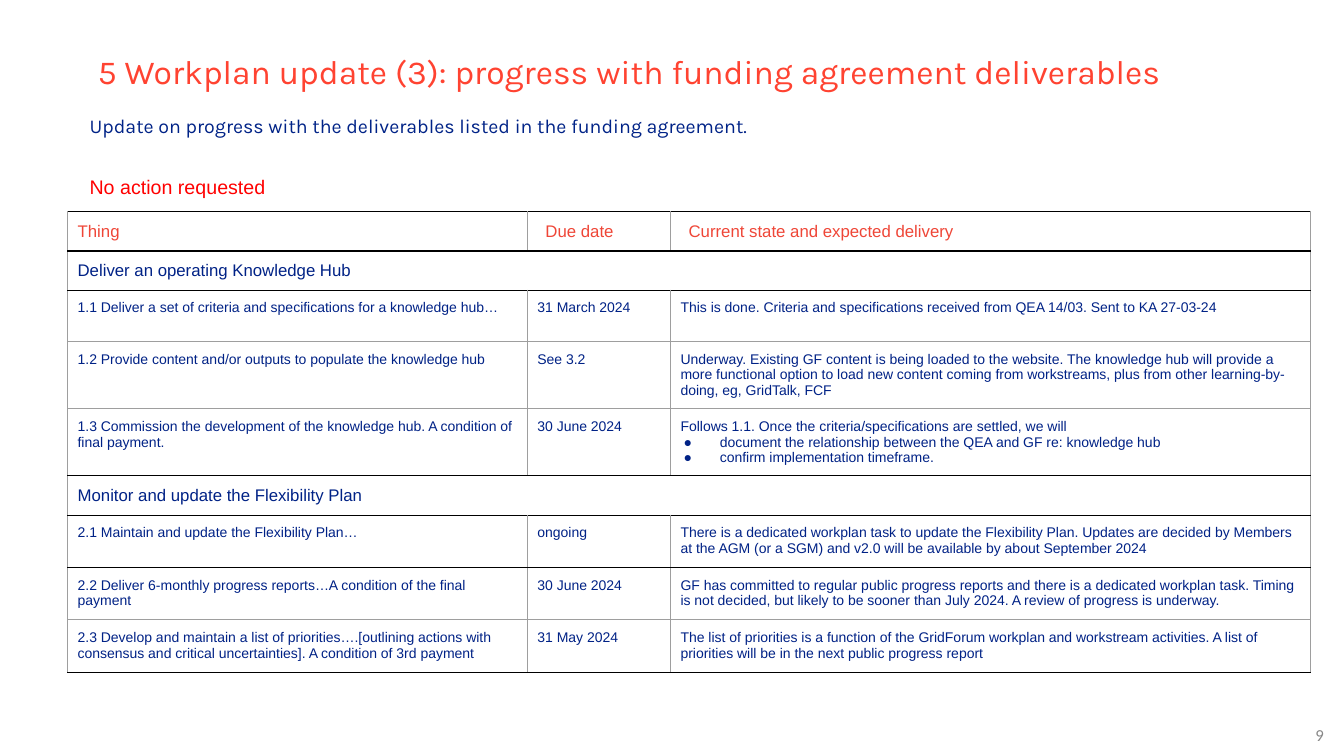
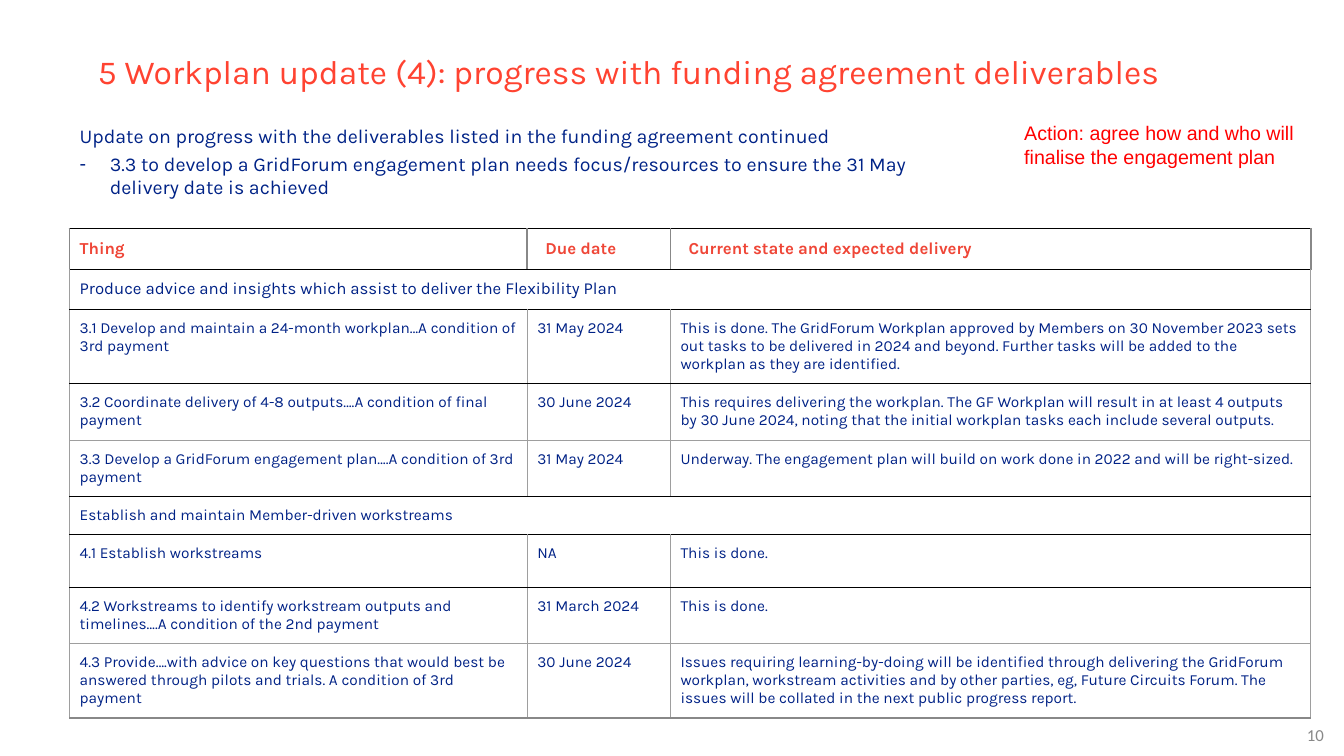
from dataclasses import dataclass

from lxml import etree
from pptx import Presentation
from pptx import util as u
from pptx.dml.color import RGBColor
from pptx.enum import text as t
from pptx.oxml import ns

# Shared look
CORAL, HEAD, NAVY, CELL = "FF4331", "EF4637", "002387", "002286"
RED, GREY, MID, BLACK = "FF0000", "9E9E9E", "888888", "000000"
KARLA, ARIAL = "Karla", "Arial"


@dataclass(frozen=True)
class Font:
    name: str
    size: float
    color: str
    bold: bool = False


@dataclass(frozen=True)
class Para:
    text: str
    font: Font
    left: float = 0
    hang: float = 0
    mark: str = ""
    before: float = 0
    line: float = 1
    align: t.PP_ALIGN = t.PP_ALIGN.LEFT


@dataclass(frozen=True)
class Edge:
    color: str = GREY
    width: float = 0.75


@dataclass(frozen=True)
class Row:
    """One cell text makes a section row; a new line in a cell is a bullet."""
    cells: tuple[str, ...]
    high: float
    base: Edge
    font: Font


@dataclass(frozen=True)
class Note:
    box: tuple[float, float, float, float]
    paras: tuple[Para, ...]
    top: float = 0.05


@dataclass(frozen=True)
class Page:
    number: int
    title: str
    notes: tuple[Note, ...]
    left: float
    top: float
    wide: tuple[float, ...]
    side: Edge
    rows: tuple[Row, ...]


THIN, DARK, THICK = Edge(), Edge(BLACK, 1), Edge(MID, 1.5)
TITLE = Font(KARLA, 24, CORAL)
LEAD = Font(KARLA, 14, NAVY)
ALERT = Font(ARIAL, 14, RED)
FOOT = Font("Calibri", 12, MID)
HEAD_A, SECT_A, BODY_A = Font(ARIAL, 12, HEAD), Font(ARIAL, 12, CELL), Font(ARIAL, 10, CELL)
HEAD_K, SECT_K, BODY_K = Font(KARLA, 12, HEAD, True), Font(KARLA, 12, CELL), Font(KARLA, 11, CELL)
NAMES = ("Thing", "Due date", "Current state and expected delivery")

PAGES = (
    Page(
        9, "5 Workplan update (3): progress with funding agreement deliverables",
        (Note((0.79, 1.08, 11.88, 0.97), (
            Para("Update on progress with the deliverables listed in the funding agreement.", LEAD),
            Para("No action requested", ALERT, before=26.5))),),
        0.67, 2.1, (4.56, 1.42, 6.35), THIN,
        (
            Row(NAMES, 0.39, DARK, HEAD_A),
            Row(("Deliver an operating Knowledge Hub",), 0.39, DARK, SECT_A),
            Row(("1.1 Deliver a set of criteria and specifications for a knowledge hub…",
                 "31 March 2024",
                 "This is done. Criteria and specifications received from QEA 14/03. "
                 "Sent to KA 27-03-24"), 0.51, THIN, BODY_A),
            Row(("1.2 Provide content and/or outputs to populate the knowledge hub",
                 "See 3.2",
                 "Underway. Existing GF content is being loaded to the website. The knowledge "
                 "hub will provide a more functional option to load new content coming from "
                 "workstreams, plus from other learning-by-doing, eg, GridTalk, FCF"),
                0.66, THIN, BODY_A),
            Row(("1.3 Commission the development of the knowledge hub. "
                 "A condition of final payment.",
                 "30 June 2024",
                 "Follows 1.1. Once the criteria/specifications are settled, we will\n"
                 "document the relationship between the QEA and GF re: knowledge hub\n"
                 "confirm implementation timeframe."), 0.66, DARK, BODY_A),
            Row(("Monitor and update the Flexibility Plan",), 0.39, DARK, SECT_A),
            Row(("2.1 Maintain and update the Flexibility Plan…",
                 "ongoing",
                 "There is a dedicated workplan task to update the Flexibility Plan. Updates "
                 "are decided by Members at the AGM (or a SGM) and v2.0 will be available by "
                 "about September 2024"), 0.52, DARK, BODY_A),
            Row(("2.2 Deliver 6-monthly progress reports…A condition of the final payment",
                 "30 June 2024",
                 "GF has committed to regular public progress reports and there is a dedicated "
                 "workplan task. Timing is not decided, but likely to be sooner than July 2024. "
                 "A review of progress is underway."), 0.52, THIN, BODY_A),
            Row(("2.3 Develop and maintain a list of priorities….[outlining actions with "
                 "consensus and critical uncertainties]. A condition of 3rd payment",
                 "31 May 2024",
                 "The list of priorities is a function of the GridForum workplan and workstream "
                 "activities. A list of priorities will be in the next public progress report"),
                0.52, DARK, BODY_A),
        )),
    Page(
        10, "5 Workplan update (4): progress with funding agreement deliverables",
        (Note((0.69, 1.18, 8.65, 1.09), (
            Para("Update on progress with the deliverables listed in the funding agreement "
                 "continued", LEAD),
            Para("3.3 to develop a GridForum engagement plan needs focus/resources to ensure "
                 "the 31 May delivery date is achieved", LEAD, 0.3, -0.3, "-", 3))),
         Note((9.98, 1.1, 3.15, 0.67), (
             Para("Action: agree how and who will finalise the engagement plan",
                  ALERT, 0.08),), 0.1)),
        0.69, 2.27, (4.54, 1.42, 6.35), THICK,
        (
            Row(NAMES, 0.4, DARK, HEAD_K),
            Row(("Produce advice and insights which assist to deliver the Flexibility Plan",),
                0.4, DARK, SECT_K),
            Row(("3.1 Develop and maintain a 24-month workplan…A condition of 3rd payment",
                 "31 May 2024",
                 "This is done. The GridForum Workplan approved by Members on 30 November 2023 "
                 "sets out tasks to be delivered in 2024 and beyond. Further tasks will be "
                 "added to the workplan as they are identified."), 0.73, DARK, BODY_K),
            Row(("3.2 Coordinate delivery of 4-8 outputs….A condition of final payment",
                 "30 June 2024",
                 "This requires delivering the workplan. The GF Workplan will result in at least "
                 "4 outputs by 30 June 2024, noting that the initial workplan tasks each include "
                 "several outputs."), 0.56, THIN, BODY_K),
            Row(("3.3 Develop a GridForum engagement plan….A condition of 3rd payment",
                 "31 May 2024",
                 "Underway. The engagement plan will build on work done in 2022 and will be "
                 "right-sized."), 0.56, DARK, BODY_K),
            Row(("Establish and maintain Member-driven workstreams",), 0.38, DARK, BODY_K),
            Row(("4.1 Establish workstreams", "NA", "This is done."), 0.52, DARK, BODY_K),
            Row(("4.2 Workstreams to identify workstream outputs and timelines….A condition of "
                 "the 2nd payment",
                 "31 March 2024", "This is done."), 0.56, THIN, BODY_K),
            Row(("4.3 Provide….with advice on key questions that would best be answered through "
                 "pilots and trials. A condition of 3rd payment",
                 "30 June 2024",
                 "Issues requiring learning-by-doing will be identified through delivering the "
                 "GridForum workplan, workstream activities and by other parties, eg, Future "
                 "Circuits Forum. The issues will be collated in the next public progress "
                 "report."), 0.74, THICK, BODY_K),
        )),
)


def paint(color: str) -> RGBColor:
    return RGBColor.from_string(color)


def solid(node, tag: str, color: str) -> None:
    fill = etree.SubElement(node, ns.qn(tag))
    etree.SubElement(fill, ns.qn("a:srgbClr"), val=color)


def write(frame, paras: tuple[Para, ...]) -> None:
    """Fill a text frame with paragraphs."""
    frame.word_wrap = True
    for i, item in enumerate(paras):
        para = frame.add_paragraph() if i else frame.paragraphs[0]
        para.alignment = item.align
        para.line_spacing = item.line
        para.space_before = u.Pt(item.before)
        run = para.add_run()
        run.text = item.text
        font = run.font
        font.name, font.size, font.bold = item.font.name, u.Pt(item.font.size), item.font.bold
        font.color.rgb = paint(item.font.color)
        props = para._p.get_or_add_pPr()
        props.set("marL", str(u.Inches(item.left)))
        props.set("indent", str(u.Inches(item.hang)))
        if item.mark:
            solid(props, "a:buClr", CELL)
            etree.SubElement(props, ns.qn("a:buFont"), typeface=ARIAL)
            etree.SubElement(props, ns.qn("a:buChar"), char=item.mark)


def place(shape, box: tuple[float, float, float, float]) -> None:
    shape.left, shape.top, shape.width, shape.height = map(u.Inches, box)


def label(slide, note: Note, anchor=t.MSO_ANCHOR.TOP) -> None:
    shape = slide.shapes.add_textbox(*map(u.Inches, note.box))
    frame = shape.text_frame
    frame.margin_top = frame.margin_bottom = u.Inches(note.top)
    frame.vertical_anchor = anchor
    write(frame, note.paras)


def rule(cell, edges: dict[str, Edge]) -> None:
    """Draw cell borders, in the order left, right, top, bottom."""
    props = cell._tc.get_or_add_tcPr()
    for side, edge in edges.items():
        line = etree.SubElement(props, ns.qn(f"a:ln{side}"), w=str(u.Pt(edge.width)))
        solid(line, "a:solidFill", edge.color)


def grid(slide, page: Page) -> None:
    high = sum(row.high for row in page.rows)
    shape = slide.shapes.add_table(
        len(page.rows), len(page.wide),
        *map(u.Inches, (page.left, page.top, sum(page.wide), high)))
    table = shape.table
    table.first_row = table.horz_banding = False
    for col, wide in zip(table.columns, page.wide):
        col.width = u.Inches(wide)
    above = DARK
    for r, row in enumerate(page.rows):
        table.rows[r].height = u.Inches(row.high)
        side = THIN if r else page.side
        for c in range(len(page.wide)):
            cell = table.cell(r, c)
            cell.margin_left = cell.margin_right = u.Inches(0.1)
            cell.margin_top = cell.margin_bottom = u.Inches(0.1)
            rule(cell, {"L": side, "R": side, "T": above, "B": row.base})
            cell.fill.background()
            if c < len(row.cells):
                first, *rest = row.cells[c].split("\n")
                left = 0.08 if r == 0 and c else 0
                write(cell.text_frame, (
                    Para(first, row.font, left),
                    *(Para(line, row.font, 0.39, -0.36, "●") for line in rest)))
        if len(row.cells) == 1:
            table.cell(r, 0).merge(table.cell(r, len(page.wide) - 1))
        above = row.base


def draw(deck, page: Page) -> None:
    slide = deck.slides.add_slide(deck.slide_layouts[5])
    # Title
    title = slide.shapes.title
    place(title, (0.79, 0.28, 12.2, 0.91))
    title.text_frame.auto_size = t.MSO_AUTO_SIZE.NONE
    title.text_frame.vertical_anchor = t.MSO_ANCHOR.MIDDLE
    write(title.text_frame, (Para(page.title, TITLE, 0.08, line=0.9),))
    # Table, notes and page number
    grid(slide, page)
    for note in page.notes:
        label(slide, note)
    number = Para(str(page.number), FOOT, align=t.PP_ALIGN.RIGHT)
    label(slide, Note((12.6, 7.09, 0.63, 0.4), (number,)), t.MSO_ANCHOR.MIDDLE)


def main() -> None:
    deck = Presentation()
    deck.slide_width, deck.slide_height = u.Inches(13.33), u.Inches(7.5)
    for page in PAGES:
        draw(deck, page)
    deck.save("out.pptx")


if __name__ == "__main__":
    main()
